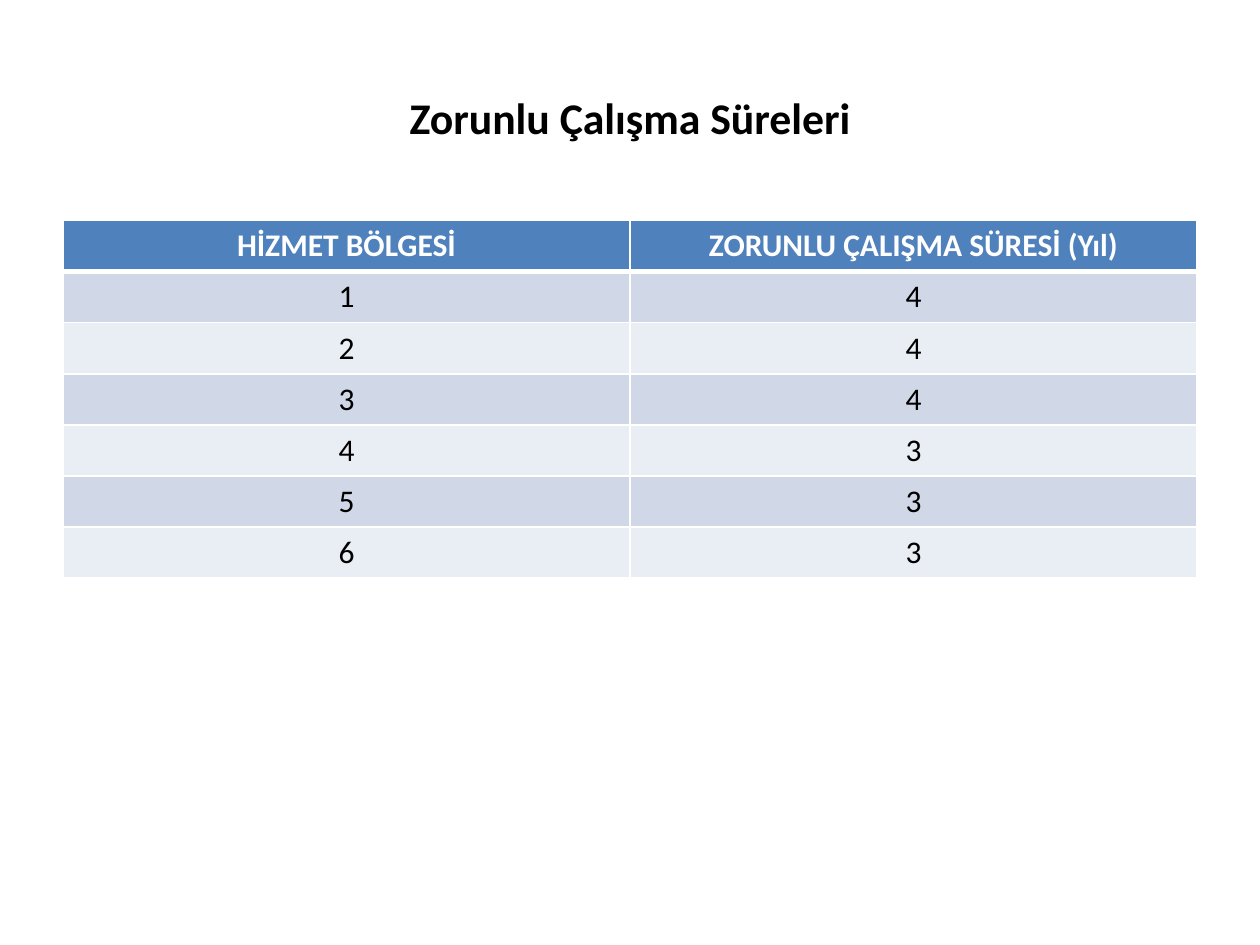
from lxml.etree import SubElement
from pptx import Presentation
from pptx.dml.color import RGBColor
from pptx.enum.text import MSO_ANCHOR, PP_ALIGN
from pptx.oxml.ns import qn
from pptx.util import Inches, Pt

BLACK = RGBColor(0x00, 0x00, 0x00)
WHITE = RGBColor(0xFF, 0xFF, 0xFF)
HEADER_BLUE = RGBColor(0x4F, 0x81, 0xBD)
BANDS = (RGBColor(0xD0, 0xD8, 0xE8), RGBColor(0xE9, 0xED, 0xF4))

HEADERS = ("HİZMET BÖLGESİ", "ZORUNLU ÇALIŞMA SÜRESİ (Yıl)")
YEARS_BY_REGION = (4, 4, 4, 3, 3, 3)


class SlideBuilder:
    font_name = "Calibri"
    title_size = Pt(25)
    table_size = Pt(18)
    thin_line = Pt(1)
    thick_line = Pt(3)

    def __init__(self, presentation):
        self.slide = presentation.slides.add_slide(presentation.slide_layouts[5])

    def add_text(self, text_frame, text, size, color, bold):
        paragraph = text_frame.paragraphs[0]
        paragraph.alignment = PP_ALIGN.CENTER
        run = paragraph.add_run()
        run.text = text
        run.font.name = self.font_name
        run.font.size = size
        run.font.bold = bold
        run.font.color.rgb = color

    def title(self, text, left, top, width, height):
        title = self.slide.shapes.title
        title.left, title.top = left, top
        title.width, title.height = width, height
        title.text_frame.vertical_anchor = MSO_ANCHOR.MIDDLE
        self.add_text(title.text_frame, text, self.title_size, BLACK, True)

    def cell_borders(self, cell, top, bottom):
        properties = cell._tc.get_or_add_tcPr()
        widths = {"a:lnL": self.thin_line, "a:lnR": self.thin_line,
                  "a:lnT": top, "a:lnB": bottom}
        for tag, width in widths.items():
            line = SubElement(properties, qn(tag), w=str(int(width)))
            fill = SubElement(line, qn("a:solidFill"))
            SubElement(fill, qn("a:srgbClr"), val=str(WHITE))

    def table(self, rows, left, top, width, height):
        frame = self.slide.shapes.add_table(
            len(rows), len(rows[0]), left, top, width, height)
        for row_index, values in enumerate(rows):
            is_header = row_index == 0
            fill = HEADER_BLUE if is_header else BANDS[(row_index - 1) % 2]
            color = WHITE if is_header else BLACK
            # The thick rule runs between the header and the first region
            top_line = self.thick_line if row_index == 1 else self.thin_line
            bottom_line = self.thick_line if is_header else self.thin_line
            for column_index, value in enumerate(values):
                cell = frame.table.cell(row_index, column_index)
                self.cell_borders(cell, top_line, bottom_line)
                cell.fill.solid()
                cell.fill.fore_color.rgb = fill
                self.add_text(cell.text_frame, str(value), self.table_size,
                              color, is_header)


def main():
    presentation = Presentation()
    presentation.slide_width = Inches(10)
    presentation.slide_height = Inches(7.5)
    builder = SlideBuilder(presentation)

    # Title
    builder.title("Zorunlu Çalışma Süreleri",
                  Inches(0.5), Inches(0.3), Inches(9), Inches(1.25))

    # Required years of service for each region
    rows = [HEADERS, *enumerate(YEARS_BY_REGION, start=1)]
    builder.table(rows, Inches(0.5), Inches(1.75), Inches(9), Inches(2.84))

    presentation.save("out.pptx")


if __name__ == "__main__":
    main()
